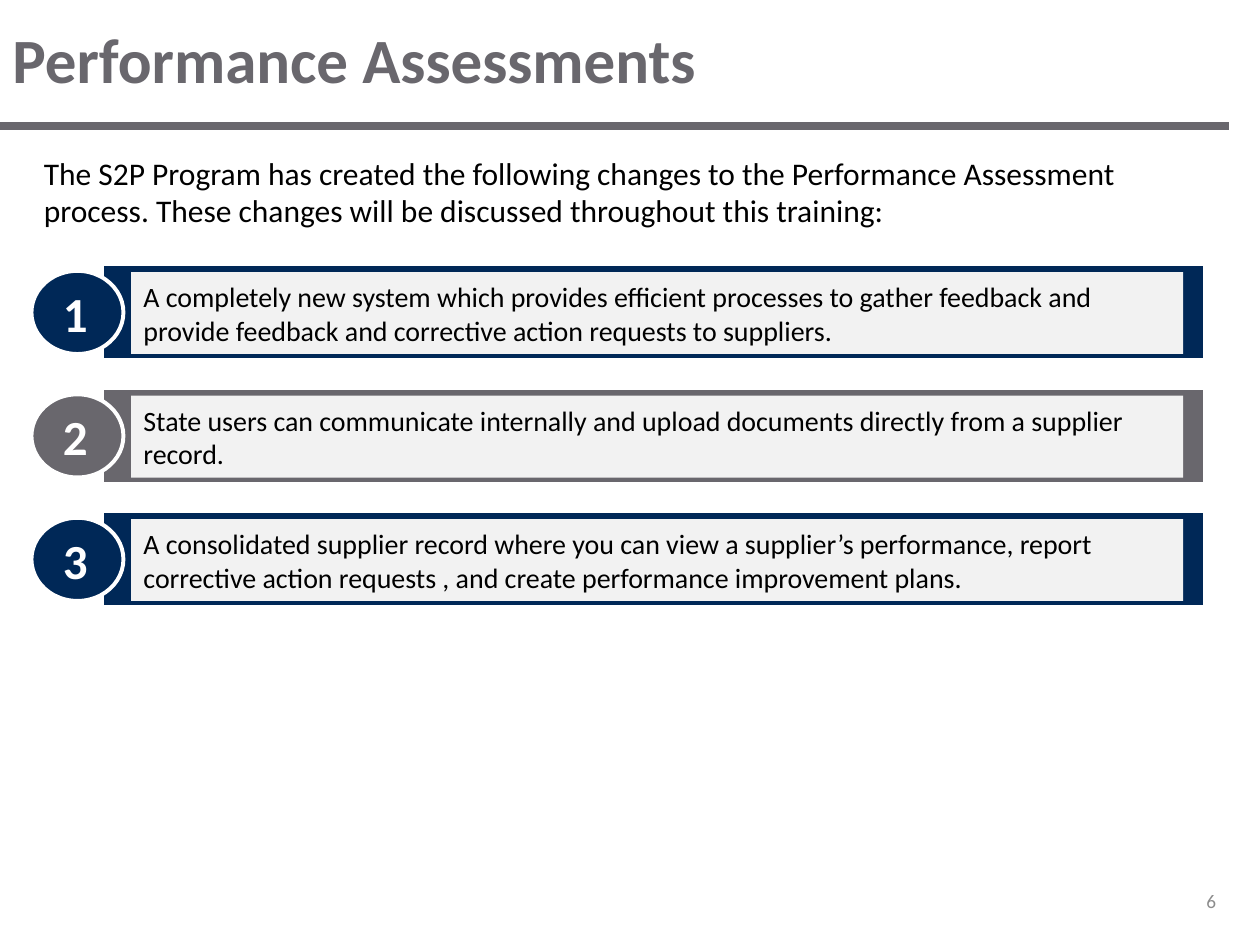
"""Build the Performance Assessments slide with its three numbered changes."""
from lxml.etree import SubElement
from pptx import Presentation
from pptx.dml.color import RGBColor
from pptx.enum.shapes import MSO_CONNECTOR as Connector, MSO_SHAPE as Shape
from pptx.enum.text import MSO_ANCHOR as Anchor, MSO_AUTO_SIZE as AutoSize, PP_ALIGN as Align
from pptx.oxml.ns import qn
from pptx.util import Inches, Pt

NAVY = RGBColor(0x00, 0x28, 0x57)
GRAY = RGBColor(0x69, 0x67, 0x6D)
PALE = RGBColor(0xF2, 0xF2, 0xF2)
MUTED = RGBColor(0x8C, 0x8C, 0x8C)
WHITE = RGBColor(0xFF, 0xFF, 0xFF)
BLACK = RGBColor(0x00, 0x00, 0x00)

CHANGES = [
    (NAVY, "A completely new system which provides efficient processes to gather feedback "
           "and provide feedback and corrective action requests to suppliers."),
    (GRAY, "State users can communicate internally and upload documents directly from a "
           "supplier record."),
    (NAVY, "A consolidated supplier record where you can view a supplier’s performance, "
           "report corrective action requests , and create performance improvement plans."),
]
FIRST_TOP = 2.1
ROW_PITCH = 0.98


def write(holder, text, size, color, bold=False, align=Align.LEFT, **frame_format):
    frame = holder.text_frame
    for key, value in {"word_wrap": True, "vertical_anchor": Anchor.MIDDLE, **frame_format}.items():
        setattr(frame, key, value)
    paragraph = frame.paragraphs[0]
    paragraph.alignment = align
    run = paragraph.add_run()
    run.text = text
    for key, value in {"name": "Calibri", "size": Pt(size), "bold": bold}.items():
        setattr(run.font, key, value)
    run.font.color.rgb = color
    return paragraph


def add_panel(kind, box, fill, outline=0):
    panel = slide.shapes.add_shape(kind, *map(Inches, box))
    panel.shadow.inherit = False
    panel.fill.solid()
    panel.fill.fore_color.rgb = fill
    if outline:
        panel.line.color.rgb = WHITE
        panel.line.width = Pt(outline)
    else:
        panel.line.fill.background()
    return panel


deck = Presentation()
deck.slide_width = Inches(10)
deck.slide_height = Inches(7.5)
slide = deck.slides.add_slide(deck.slide_layouts[6])

title_rule = slide.shapes.add_connector(
    Connector.STRAIGHT, Inches(0), Inches(1), Inches(9.75), Inches(1))
title_rule.line.color.rgb = GRAY
title_rule.line.width = Pt(5)
SubElement(title_rule._element.spPr, qn("a:effectLst"))

title = slide.shapes.add_textbox(Inches(0), Inches(0), Inches(10), Inches(0.92))
write(title, "Performance Assessments", 36, GRAY, bold=True)

intro = slide.shapes.add_textbox(Inches(0.25), Inches(1.17), Inches(9.5), Inches(0.83))
intro_paragraph = write(
    intro,
    "The S2P Program has created the following changes to the Performance Assessment "
    "process. These changes will be discussed throughout this training:",
    18, BLACK, vertical_anchor=Anchor.TOP)
intro_paragraph.space_before = intro_paragraph.space_after = Pt(6)

page_number = slide.shapes.add_textbox(Inches(8.08), Inches(6.95), Inches(1.67), Inches(0.4))
write(page_number, "6", 11, MUTED, align=Align.RIGHT)

for index, (color, change) in enumerate(CHANGES):
    top = FIRST_TOP + index * ROW_PITCH
    add_panel(Shape.RECTANGLE, (0.81, top, 8.75, 0.76), color, 2)
    card = add_panel(Shape.RECTANGLE, (1.04, top + 0.06, 8.35, 0.65), PALE)
    write(card, change, 16, BLACK)
    add_panel(Shape.OVAL, (0.25, top + 0.05, 0.73, 0.66), color, 2.25)
    numeral = slide.shapes.add_textbox(
        Inches(0.4), Inches(top + 0.1), Inches(0.43), Inches(0.57))
    write(numeral, str(index + 1), 28, WHITE, bold=True, word_wrap=False,
          vertical_anchor=Anchor.TOP, auto_size=AutoSize.SHAPE_TO_FIT_TEXT)

deck.save("out.pptx")
